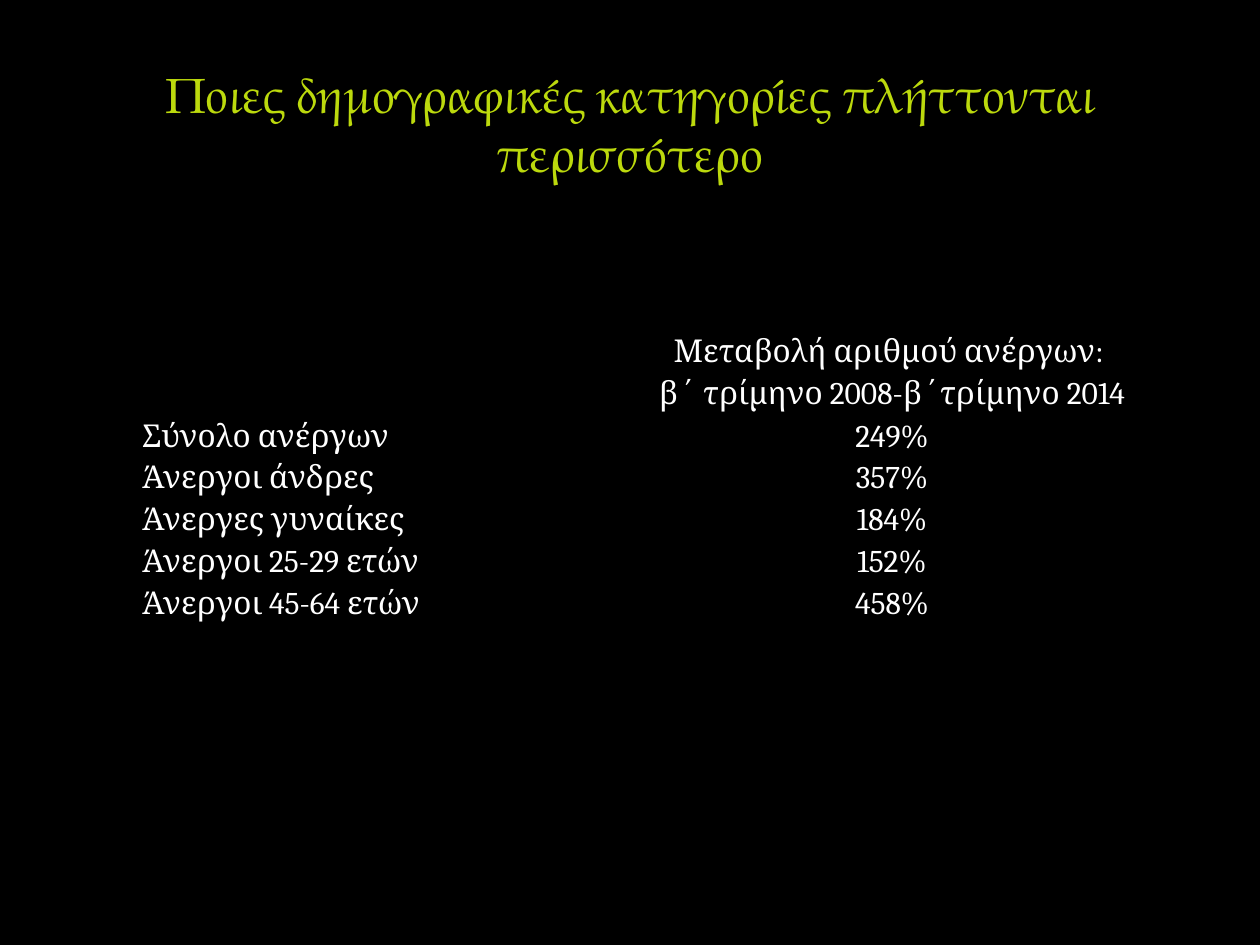
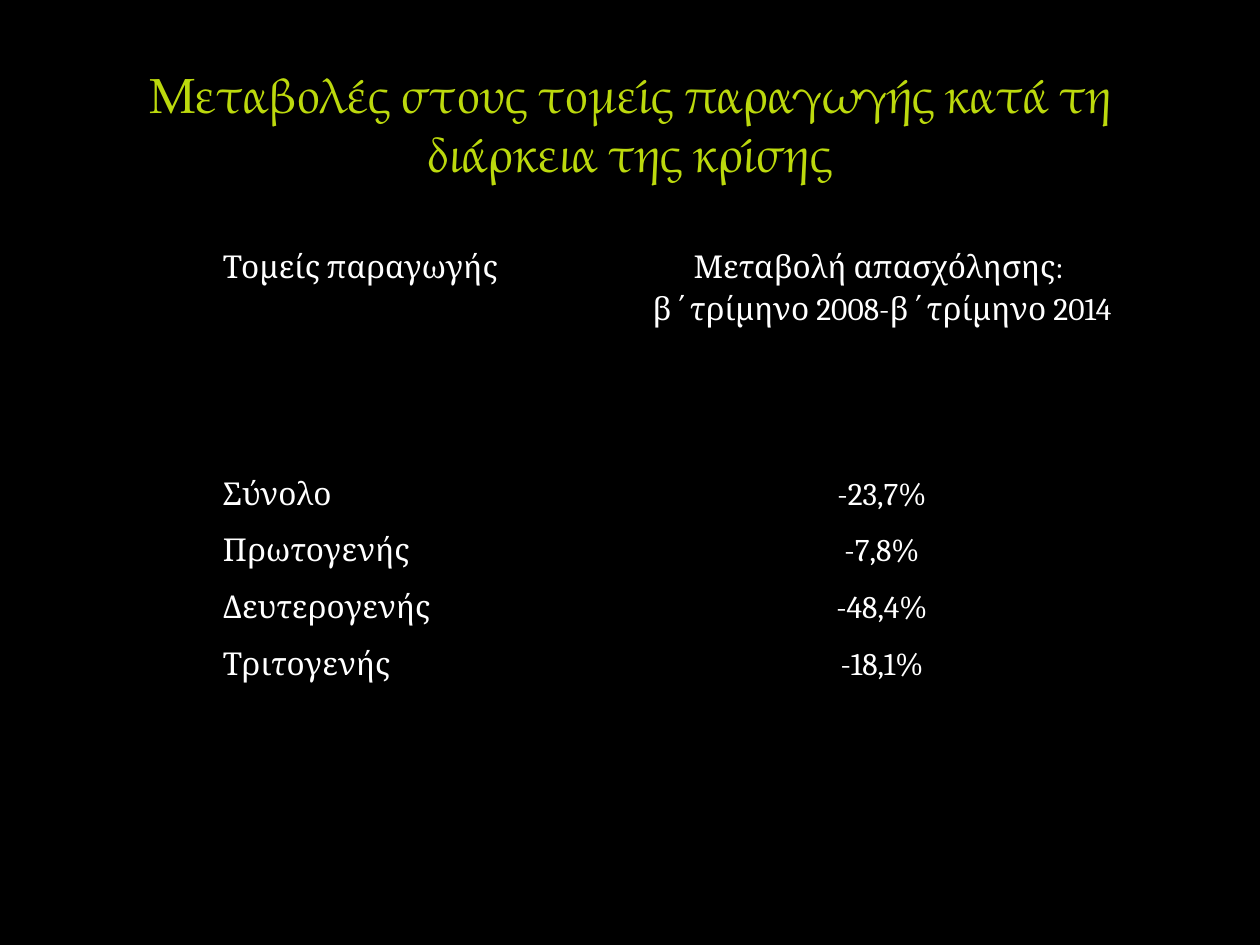
from lxml import etree
from pptx import Presentation
from pptx import util as u
from pptx.dml.color import RGBColor
from pptx.enum import text
from pptx.oxml import ns

COLORS = {"background": "000000", "title": "BCD90D", "outline": "494040",
          "body": "FFFFFF", "border": "000000"}
TITLE_FONT = "TeX Gyre Pagella"
BODY_FONT = "Cambria"


class Deck:
    """Holds the shared style and the current slide."""

    def __init__(self):
        self.presentation = Presentation()
        self.presentation.slide_width = u.Inches(10)
        self.presentation.slide_height = u.Inches(7.5)
        fill = self.presentation.slide_master.background.fill
        fill.solid()
        fill.fore_color.rgb = RGBColor.from_string(COLORS["background"])
        self.slide = None

    def add_slide(self, title):
        layout = self.presentation.slide_layouts.get_by_name("Title Only")
        self.slide = self.presentation.slides.add_slide(layout)
        self.set_title(title)

    def style_run(self, run, font, size, color):
        run.font.name = font
        run.font.size = u.Pt(size)
        run.font.color.rgb = RGBColor.from_string(COLORS[color])

    def make_line(self, tag, width, color, alpha=100):
        line = etree.Element(ns.qn(tag), w=str(u.Pt(width)))
        fill = etree.SubElement(line, ns.qn("a:solidFill"))
        shade = etree.SubElement(fill, ns.qn("a:srgbClr"), val=COLORS[color])
        if alpha < 100:
            etree.SubElement(shade, ns.qn("a:alpha"), val=str(alpha * 1000))
        return line

    def set_title(self, title):
        shape = self.slide.shapes.title
        shape.left, shape.top = u.Inches(0.5), u.Inches(0.17)
        shape.width, shape.height = u.Inches(9), u.Inches(1.33)
        frame = shape.text_frame
        frame.text = title
        frame.auto_size = text.MSO_AUTO_SIZE.NONE
        frame.vertical_anchor = text.MSO_ANCHOR.BOTTOM
        paragraph = frame.paragraphs[0]
        paragraph.alignment = text.PP_ALIGN.CENTER
        run = paragraph.runs[0]
        self.style_run(run, TITLE_FONT, 28, "title")
        properties = run._r.get_or_add_rPr()
        properties.set("spc", "-100")
        properties.insert(0, self.make_line("a:ln", 0.25, "outline", 25))

    def set_cell(self, cell, content, alignment):
        cell.margin_left = cell.margin_right = u.Inches(0.07)
        cell.margin_top = cell.margin_bottom = 0
        cell.text_frame.text = content
        for paragraph in cell.text_frame.paragraphs:
            paragraph.alignment = alignment
            paragraph.line_spacing = 1.15
            for run in paragraph.runs:
                self.style_run(run, BODY_FONT, 18, "body")
        cell.fill.background()
        properties = cell._tc.get_or_add_tcPr()
        for index, side in enumerate("LRTB"):
            properties.insert(index, self.make_line(f"a:ln{side}", 1, "border"))

    def add_table(self, left, top, widths, header_height, row_height, rows):
        heights = [header_height] + [row_height] * (len(rows) - 1)
        table = self.slide.shapes.add_table(
            len(rows), len(widths), u.Inches(left), u.Inches(top),
            u.Inches(sum(widths)), u.Inches(sum(heights))).table
        table.first_row = table.horz_banding = False
        for column, width in zip(table.columns, widths):
            column.width = u.Inches(width)
        alignments = (text.PP_ALIGN.JUSTIFY, text.PP_ALIGN.CENTER)
        for row, height, contents in zip(table.rows, heights, rows):
            row.height = u.Inches(height)
            for cell, content, alignment in zip(row.cells, contents, alignments):
                self.set_cell(cell, content, alignment)


def main():
    deck = Deck()

    deck.add_slide("Ποιες δημογραφικές κατηγορίες πλήττονται περισσότερο")
    deck.add_table(1.06, 2.61, (4.09, 3.86), 0.67, 0.33, [
        ("", "Μεταβολή αριθμού ανέργων: \nβ΄ τρίμηνο 2008-β΄τρίμηνο 2014"),
        ("Σύνολο ανέργων", "249%"),
        ("Άνεργοι άνδρες", "357%"),
        ("Άνεργες γυναίκες", "184%"),
        ("Άνεργοι 25-29 ετών", "152%"),
        ("Άνεργοι 45-64 ετών", "458%"),
    ])

    deck.add_slide("Μεταβολές στους τομείς παραγωγής κατά τη διάρκεια της κρίσης")
    deck.add_table(1.7, 1.94, (3.36, 3.88), 1.8, 0.45, [
        ("Τομείς παραγωγής",
         "Μεταβολή απασχόλησης: \nβ΄τρίμηνο 2008-β΄τρίμηνο 2014"),
        ("Σύνολο", "-23,7%"),
        ("Πρωτογενής", "-7,8%"),
        ("Δευτερογενής", "-48,4%"),
        ("Τριτογενής", "-18,1%"),
    ])

    deck.presentation.save("out.pptx")


if __name__ == "__main__":
    main()
